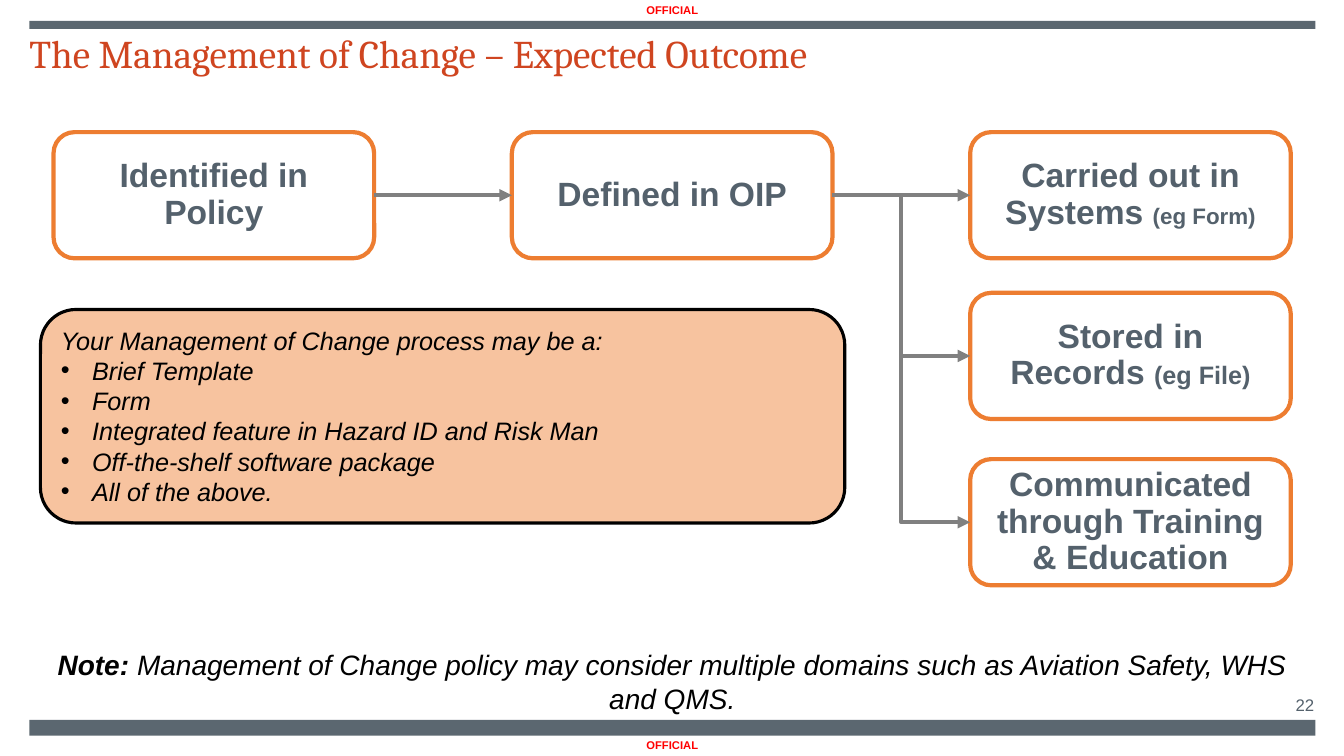
from lxml import etree
from pptx import Presentation
from pptx.dml.color import RGBColor
from pptx.enum.shapes import MSO_CONNECTOR, MSO_SHAPE
from pptx.enum.text import MSO_ANCHOR, MSO_AUTO_SIZE, PP_ALIGN
from pptx.oxml.ns import qn
from pptx.util import Cm, Pt

LEFT, CENTER, RIGHT = PP_ALIGN.LEFT, PP_ALIGN.CENTER, PP_ALIGN.RIGHT
TOP, MIDDLE, BOTTOM = MSO_ANCHOR.TOP, MSO_ANCHOR.MIDDLE, MSO_ANCHOR.BOTTOM
STRAIGHT, ELBOW = MSO_CONNECTOR.STRAIGHT, MSO_CONNECTOR.ELBOW
RIGHT_SIDE, LEFT_SIDE = 3, 1

SLATE, SLATE_TEXT, ORANGE, PEACH = "5B6770", "54616C", "ED7D31", "F7C39F"
RUST, RED, GREY, BLACK = "CF4520", "FF0000", "808080", "000000"

TITLE = "The Management of Change – Expected Outcome"
MARKING = "OFFICIAL"
PAGE_NUMBER = "22"
# name: (column, row, [(text, size), ...])
STEPS = {
    "policy": (0, 0, [("Identified in Policy", 24)]),
    "oip": (1, 0, [("Defined in OIP", 24)]),
    "systems": (2, 0, [("Carried out in Systems ", 24), ("(eg Form)", 16)]),
    "records": (2, 1, [("Stored in Records ", 24), ("(eg File)", 18)]),
    "training": (2, 2, [("Communicated through Training & Education", 24)]),
}
ARROWS = [
    ("policy", "oip", STRAIGHT),
    ("oip", "systems", STRAIGHT),
    ("oip", "records", ELBOW),
    ("oip", "training", ELBOW),
]
OPTIONS_INTRO = "Your Management of Change process may be a:"
OPTIONS = [
    "Brief Template",
    "Form",
    "Integrated feature in Hazard ID and Risk Man",
    "Off-the-shelf software package",
    "All of the above.",
]
NOTE = [
    ("Note: ", {"bold": True}),
    ("Management of Change policy may consider multiple domains "
     "such as Aviation Safety, WHS and QMS.", {}),
]

# Lengths in centimetres
MARGIN, CONTENT_WIDTH = 0.74, 32.41
STEP_LEFT, STEP_PITCH = 1.35, 11.55
STEP_WIDTH, STEP_HEIGHT = 8.08, 3.18
ROW_TOPS = [3.33, 7.38, 11.57]


def color(hex_value):
    return RGBColor.from_string(hex_value)


def place(shape, left, top, width, height):
    shape.left, shape.top = Cm(left), Cm(top)
    shape.width, shape.height = Cm(width), Cm(height)


def set_frame(shape, anchor, inset=None):
    frame = shape.text_frame
    values = {"word_wrap": True, "auto_size": MSO_AUTO_SIZE.NONE, "vertical_anchor": anchor}
    if inset is not None:
        for side in ("left", "right", "top", "bottom"):
            values["margin_" + side] = Cm(inset)
    for name, value in values.items():
        setattr(frame, name, value)
    return frame


def write(paragraph, runs, align, hex_value, spacing=None, **common):
    """Fill a paragraph with (text, font values) runs sharing common font values."""
    paragraph.alignment = align
    paragraph.line_spacing = spacing
    for text, own in runs:
        run = paragraph.add_run()
        run.text = text
        for name, value in {"name": "Arial", **common, **own}.items():
            setattr(run.font, name, value)
        run.font.color.rgb = color(hex_value)


def add_box(slide, kind, box, fill=None, line=None, line_width=3):
    shape = slide.shapes.add_shape(kind, *map(Cm, box))
    shape.shadow.inherit = False
    if fill:
        shape.fill.solid()
        shape.fill.fore_color.rgb = color(fill)
    else:
        shape.fill.background()
    if line:
        shape.line.color.rgb = color(line)
        shape.line.width = Pt(line_width)
    else:
        shape.line.fill.background()
    return shape


def add_text(slide, box, runs, align, hex_value, anchor=TOP, inset=None, **common):
    text_box = slide.shapes.add_textbox(*map(Cm, box))
    frame = set_frame(text_box, anchor, inset)
    write(frame.paragraphs[0], runs, align, hex_value, **common)


def add_bullet(paragraph):
    properties = paragraph._p.get_or_add_pPr()
    properties.set("marL", str(Cm(0.79)))
    properties.set("indent", str(-Cm(0.79)))
    etree.SubElement(properties, qn("a:buFont")).set("typeface", "Arial")
    etree.SubElement(properties, qn("a:buChar")).set("char", "•")


def add_arrow(slide, start, end, kind):
    connector = slide.shapes.add_connector(kind, 0, 0, 0, 0)
    connector.begin_connect(start, RIGHT_SIDE)
    connector.end_connect(end, LEFT_SIDE)
    connector.line.color.rgb = color(GREY)
    connector.line.width = Pt(3)
    etree.SubElement(connector.line._get_or_add_ln(), qn("a:tailEnd")).set("type", "triangle")
    etree.SubElement(connector._element.spPr, qn("a:effectLst"))


def add_step(slide, column, row, parts):
    box = (STEP_LEFT + column * STEP_PITCH, ROW_TOPS[row], STEP_WIDTH, STEP_HEIGHT)
    step = add_box(slide, MSO_SHAPE.ROUNDED_RECTANGLE, box, line=ORANGE)
    runs = [(text, {"size": Pt(size)}) for text, size in parts]
    write(set_frame(step, MIDDLE).paragraphs[0], runs, CENTER, SLATE_TEXT,
          spacing=0.9, bold=True)
    return step


def add_options(slide):
    panel = add_box(slide, MSO_SHAPE.ROUNDED_RECTANGLE, (1.02, 7.8, 20.27, 5.38),
                    PEACH, BLACK, 2.25)
    frame = set_frame(panel, TOP)
    for index, text in enumerate([OPTIONS_INTRO, *OPTIONS]):
        paragraph = frame.add_paragraph() if index else frame.paragraphs[0]
        if index:
            add_bullet(paragraph)
        write(paragraph, [(text, {})], LEFT, BLACK, size=Pt(18), italic=True)


def main():
    presentation = Presentation()
    presentation.slide_width, presentation.slide_height = Cm(33.87), Cm(19.05)
    slide = presentation.slides.add_slide(presentation.slide_layouts[5])

    for top, height in [(0.53, 0.2), (18.14, 0.4)]:
        add_box(slide, MSO_SHAPE.RECTANGLE, (MARGIN, top, CONTENT_WIDTH, height), SLATE)
    for top in (0, 18.52):
        add_text(slide, (MARGIN, top, CONTENT_WIDTH, 0.53), [(MARKING, {})], CENTER, RED,
                 MIDDLE, 0.2, size=Pt(8), bold=True)

    title = slide.shapes.title
    place(title, MARGIN, 0.86, 26.09, 1.45)
    write(set_frame(title, TOP, 0).paragraphs[0], [(TITLE, {"name": "Cambria"})],
          LEFT, RUST, spacing=0.9, size=Pt(28))
    add_text(slide, (30.94, 17.53, 2.18, 0.48), [(PAGE_NUMBER, {})], RIGHT, SLATE_TEXT,
             BOTTOM, 0, size=Pt(12))

    steps = {name: add_step(slide, *step) for name, step in STEPS.items()}
    for start, end, kind in ARROWS:
        add_arrow(slide, steps[start], steps[end], kind)
    add_options(slide)
    add_text(slide, (MARGIN, 16.2, CONTENT_WIDTH, 1.96), NOTE, CENTER, BLACK,
             size=Pt(20), italic=True)
    presentation.save("out.pptx")


if __name__ == "__main__":
    main()
